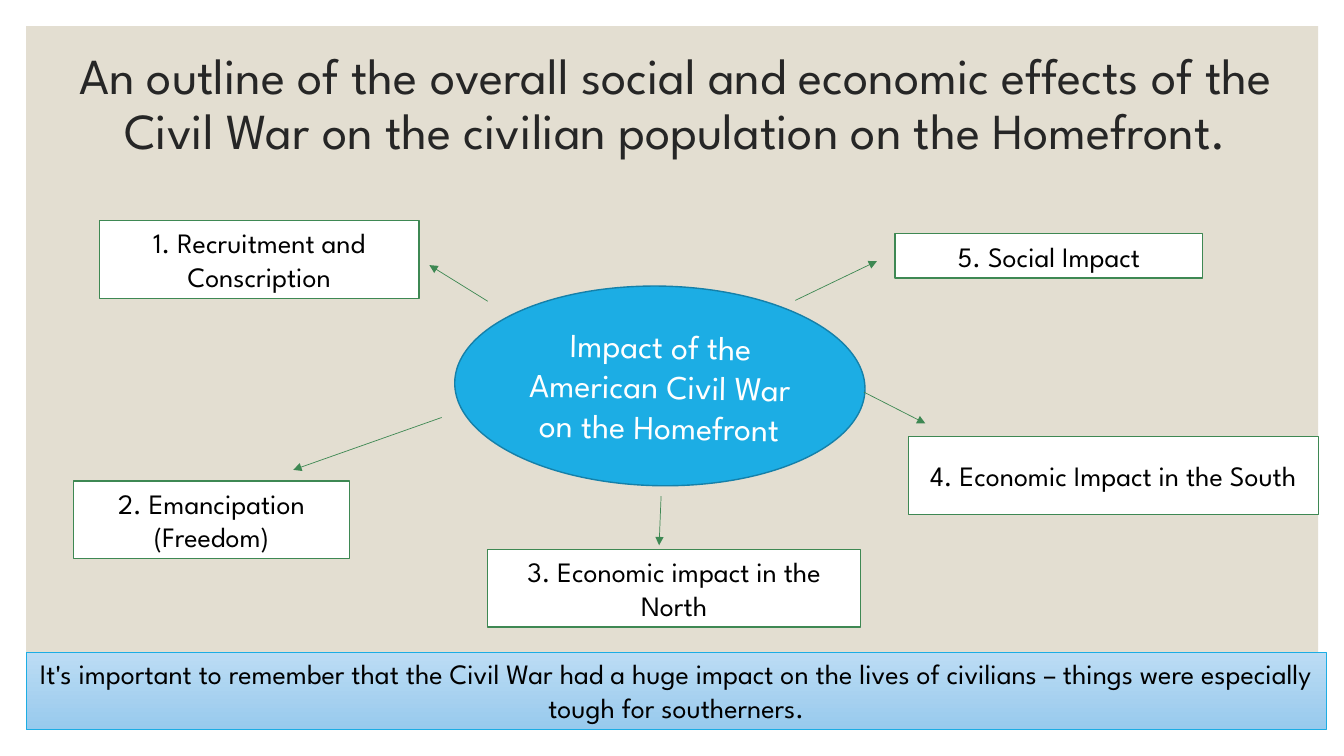
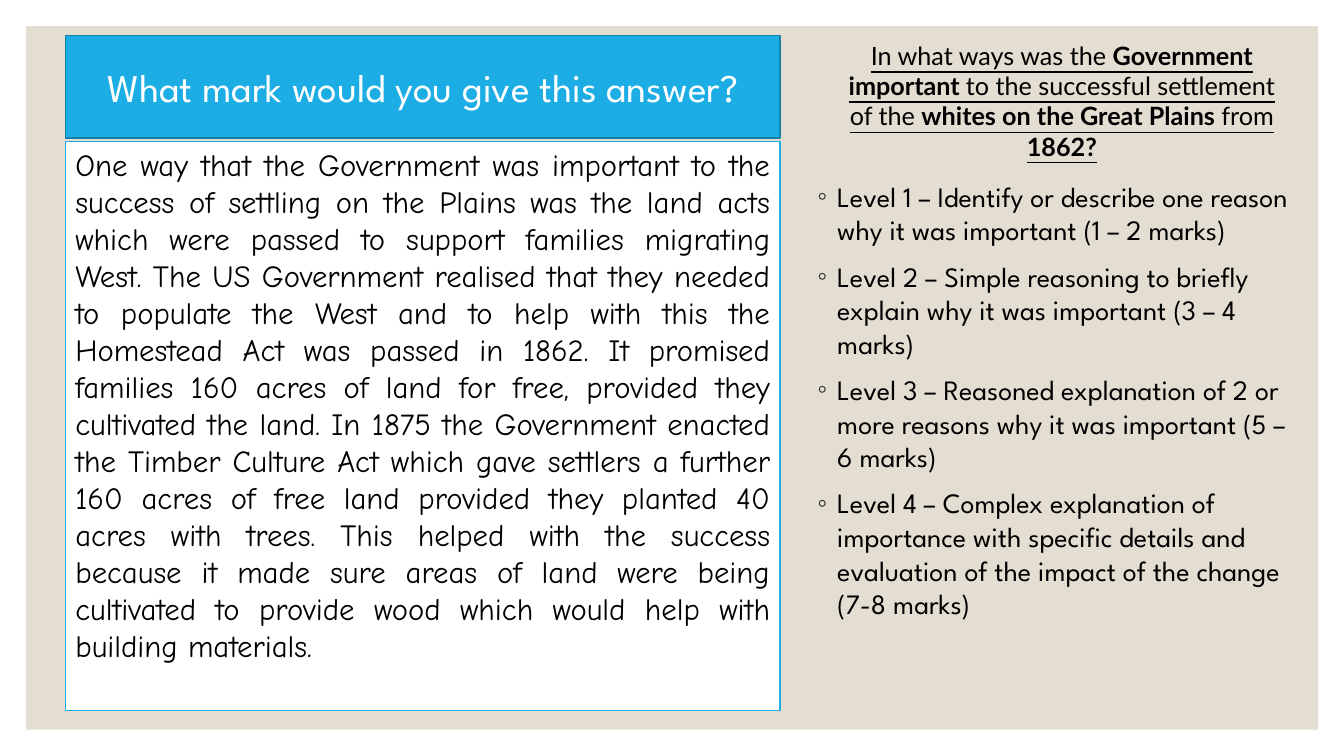
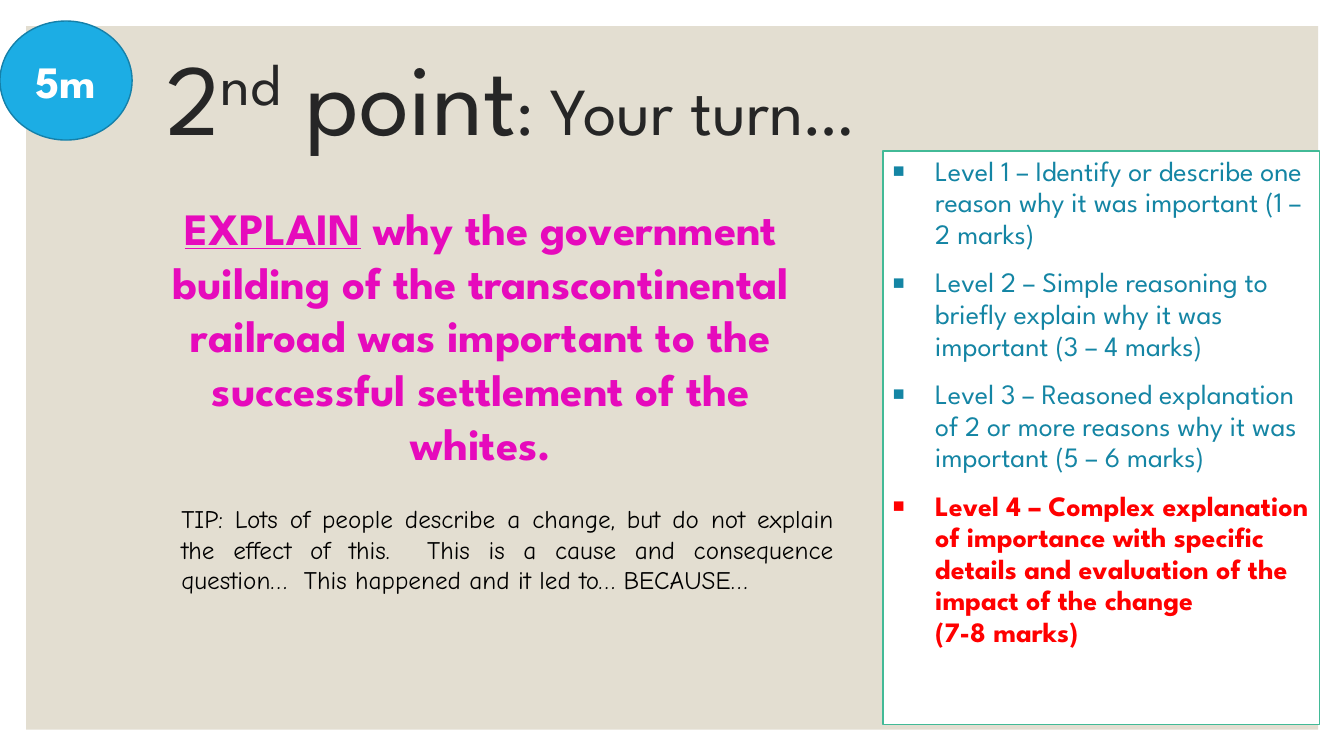
"""Build three lesson slides on the American Civil War and the Great Plains."""
import dataclasses
import typing

import lxml.etree
import pptx
import pptx.dml.color
import pptx.enum.dml
import pptx.enum.shapes
import pptx.enum.text
import pptx.oxml
import pptx.oxml.ns
import pptx.slide
import pptx.util

Cm = pptx.util.Cm
Pt = pptx.util.Pt
Kind = pptx.enum.shapes.MSO_SHAPE
Align = pptx.enum.text.PP_ALIGN
Anchor = pptx.enum.text.MSO_ANCHOR
Fit = pptx.enum.text.MSO_AUTO_SIZE
Area = tuple[float, float, float, float]
Format = dict[str, typing.Any]


@dataclasses.dataclass(frozen=True)
class Theme:
    sand: str = "E3DED1"
    white: str = "FFFFFF"
    black: str = "000000"
    dark: str = "262626"
    blue: str = "1CADE4"
    navy: str = "1580A9"
    green: str = "3E8853"
    mint: str = "42BA97"
    teal: str = "1485A4"
    red: str = "FF0000"
    pink: str = "E60ABC"
    fade: tuple[str, str] = ("BCDCF4", "98CAED")
    main: str = "League Spartan"
    hand: str = "Comic Neue"
    plain: str = "Lato"
    small: int = 18
    text: int = 20
    essay: int = 22
    hub: int = 24
    head: int = 28
    bold: int = 32
    title: int = 36
    turn: int = 48
    giant: int = 72


THEME = Theme()


@dataclasses.dataclass(frozen=True)
class Run:
    text: str
    size: int = THEME.text
    ink: str = THEME.black
    face: str = THEME.main
    bold: bool = False
    under: bool = False
    lift: int = 0


@dataclasses.dataclass(frozen=True)
class Mark:
    sign: str
    ink: str
    dent: float
    scale: int = 100


@dataclasses.dataclass(frozen=True)
class Para:
    runs: list[Run]
    form: Format = dataclasses.field(default_factory=lambda: {"alignment": Align.CENTER})
    mark: Mark | None = None


@dataclasses.dataclass(frozen=True)
class Box:
    area: Area
    paras: list[Para] = dataclasses.field(default_factory=list)
    kind: Kind | None = Kind.RECTANGLE
    fill: str | tuple[str, str] = THEME.white
    line: str | None = None
    width: float = 1
    anchor: Anchor = Anchor.MIDDLE
    grow: bool = False
    turn: float = 0


@dataclasses.dataclass(frozen=True)
class Arrow:
    start: tuple[float, float]
    end: tuple[float, float]


JUST: Format = {"alignment": Align.JUSTIFY}
LEVELS = [
    "Level 1 – Identify or describe one reason why it was important (1 – 2 marks)",
    "Level 2 – Simple reasoning to briefly explain why it was important (3 – 4 marks)",
    "Level 3 – Reasoned explanation of 2 or more reasons why it was important (5 – 6 marks)",
    "Level 4 – Complex explanation of importance with specific details and evaluation"
    " of the impact of the change (7-8 marks)",
]
ESSAY = (
    "One way that the Government was important to the success of settling on the Plains was"
    " the land acts which were passed to support families migrating West. The US Government"
    " realised that they needed to populate the West and to help with this the Homestead Act"
    " was passed in 1862. It promised families 160 acres of land for free, provided they"
    " cultivated the land. In 1875 the Government enacted the Timber Culture Act which gave"
    " settlers a further 160 acres of free land provided they planted 40 acres with trees."
    " This helped with the success because it made sure areas of land were being cultivated"
    " to provide wood which would help with building materials.  "
)
TOPICS: list[tuple[str, Area]] = [
    ("1. Recruitment and Conscription", (2.51, 5.56, 8.05, 1.96)),
    ("2. Emancipation (Freedom)", (1.85, 12.12, 6.96, 1.96)),
    ("3. Economic impact in the North", (12.29, 13.84, 9.4, 1.96)),
    ("5. Social Impact", (22.56, 5.89, 7.75, 1.12)),
    ("4. Economic Impact in the South", (22.89, 11, 10.34, 1.96)),
]
ARROWS = [
    Arrow((20.04, 7.57), (22.1, 6.58)),
    Arrow((12.29, 7.59), (10.82, 6.68)),
    Arrow((16.66, 12.5), (16.61, 13.74)),
    Arrow((11.13, 10.52), (7.39, 11.84)),
    Arrow((21.77, 9.88), (23.32, 10.67)),
]


def tint(code: str) -> pptx.dml.color.RGBColor:
    """Turn a hex code into a colour."""
    return pptx.dml.color.RGBColor.from_string(code)


def apply(target: typing.Any, form: Format) -> None:
    """Set each format value on the target."""
    for name, value in form.items():
        setattr(target, name, value)


def child(parent: typing.Any, tag: str, **form: str) -> None:
    """Append a drawing element with its attributes."""
    lxml.etree.SubElement(parent, pptx.oxml.ns.qn(tag), form)


def write(para: typing.Any, run: Run) -> None:
    """Add a run, with a line break at each newline."""
    for index, part in enumerate(run.text.split("\n")):
        if index:
            para.add_line_break()
        piece = para.add_run()
        piece.text = part
        apply(piece.font, {"name": run.face, "size": Pt(run.size),
                           "bold": run.bold, "underline": run.under})
        piece.font.color.rgb = tint(run.ink)
        if run.lift:
            piece.font._element.set("baseline", str(run.lift * 1000))


def bullet(para: typing.Any, mark: Mark) -> None:
    """Give a paragraph a hanging bullet."""
    props = para._p.get_or_add_pPr()
    dent = Cm(mark.dent)
    props.set("marL", str(dent))
    props.set("indent", str(-dent))
    shade = lxml.etree.SubElement(props, pptx.oxml.ns.qn("a:buClr"))
    child(shade, "a:srgbClr", val=mark.ink)
    child(props, "a:buSzPct", val=str(mark.scale * 1000))
    child(props, "a:buFont", typeface="Arial")
    child(props, "a:buChar", char=mark.sign)


def paint(shape: typing.Any, box: Box) -> None:
    """Set the fill, line and shadow of a shape."""
    shape.shadow.inherit = False
    if isinstance(box.fill, str):
        shape.fill.solid()
        shape.fill.fore_color.rgb = tint(box.fill)
    else:
        shape.fill.gradient()
        shape.fill.gradient_angle = 270
        for stop, code, place in zip(shape.fill.gradient_stops, box.fill, (0, 1)):
            stop.color.rgb = tint(code)
            stop.position = place
    if box.line:
        shape.line.color.rgb = tint(box.line)
        shape.line.width = Pt(box.width)
    else:
        shape.line.fill.background()


def draw(slide: pptx.slide.Slide, box: Box) -> None:
    """Draw a box with its text."""
    area = [Cm(size) for size in box.area]
    if box.kind is None:
        shape = slide.shapes.add_textbox(*area)
    else:
        shape = slide.shapes.add_shape(box.kind, *area)
        paint(shape, box)
    shape.rotation = box.turn
    frame = shape.text_frame
    apply(frame, {"word_wrap": True, "vertical_anchor": box.anchor,
                  "auto_size": Fit.SHAPE_TO_FIT_TEXT if box.grow else Fit.NONE})
    for index, item in enumerate(box.paras):
        para = frame.add_paragraph() if index else frame.paragraphs[0]
        apply(para, item.form)
        if item.mark:
            bullet(para, item.mark)
        for run in item.runs:
            write(para, run)


def point(slide: pptx.slide.Slide, arrow: Arrow) -> None:
    """Draw a thin arrow."""
    ends = [Cm(size) for size in arrow.start + arrow.end]
    link = slide.shapes.add_connector(pptx.enum.shapes.MSO_CONNECTOR.STRAIGHT, *ends)
    link.line.color.rgb = tint(THEME.green)
    link.line.width = Pt(0.5)
    child(link.line._get_or_add_ln(), "a:tailEnd", type="triangle")
    child(link._element.spPr, "a:effectLst")


def title(area: Area, runs: list[Run], align: Align) -> Box:
    """Make a slide title."""
    return Box(area, [Para(runs, {"alignment": align, "line_spacing": 0.9})], kind=None)


def begin(deck: typing.Any) -> pptx.slide.Slide:
    """Add a blank slide with the sand panel."""
    slide = deck.slides.add_slide(deck.slide_layouts[6])
    draw(slide, Box((0.66, 0.66, 32.56, 17.73), fill=THEME.sand))
    return slide


def impact(deck: typing.Any) -> None:
    """Draw the map of effects on the Homefront."""
    slide = begin(deck)
    draw(slide, title((0.48, 0.43, 33.1, 4.47), [Run(
        "An outline of the overall social and economic effects of the Civil War"
        " on the civilian population on the Homefront.", THEME.title, THEME.dark)], Align.CENTER))
    draw(slide, Box((11.46, 7.21, 10.34, 5.03), [Para([Run(
        "Impact of the American Civil War on the Homefront", THEME.hub, THEME.white)])],
        Kind.OVAL, THEME.blue, THEME.navy, turn=1))
    for text, area in TOPICS:
        draw(slide, Box(area, [Para([Run(text)])], line=THEME.green, grow=True))
    for arrow in ARROWS:
        point(slide, arrow)
    draw(slide, Box((0.66, 16.43, 32.77, 1.96), [Para([Run(
        "It's important to remember that the Civil War had a huge impact on the lives of"
        " civilians – things were especially tough for southerners.")])],
        fill=THEME.fade, line=THEME.blue, width=0.5, anchor=Anchor.TOP, grow=True))


def answer(deck: typing.Any) -> None:
    """Draw the sample answer beside its mark scheme."""
    slide = begin(deck)
    draw(slide, Box((1.65, 3.56, 18.01, 14.35),
                    [Para([Run(ESSAY, THEME.essay, face=THEME.hand)], JUST)],
                    line=THEME.blue, anchor=Anchor.TOP, grow=True))
    draw(slide, Box((1.65, 0.89, 18.01, 2.59), [Para([Run(
        "What mark would you give this answer?", THEME.head, THEME.white)])],
        fill=THEME.blue, line=THEME.navy))
    mark = Mark("◦", THEME.dark, 0.5)
    form = {"alignment": Align.LEFT, "space_before": Pt(9)}
    draw(slide, Box((20.35, 4.39, 12.8, 13),
                    [Para([Run(text)], form, mark) for text in LEVELS],
                    kind=None, anchor=Anchor.TOP))
    parts = ["In what ways was the ", "Government important ",
             "to the successful settlement of the ", "whites on the Great Plains ",
             "from ", "1862?"]
    runs = [Run(text, THEME.small, face=THEME.plain, bold=index % 2 == 1, under=True)
            for index, text in enumerate(parts)]
    draw(slide, Box((20.93, 0.89, 11.66, 3.33), [Para(runs)],
                    kind=None, anchor=Anchor.TOP, grow=True))


def task(deck: typing.Any) -> None:
    """Draw the timed writing task."""
    slide = begin(deck)
    big = Run("2", THEME.giant, THEME.dark)
    draw(slide, title((3.94, 0.53, 26.67, 4.11), [
        big,
        dataclasses.replace(big, text="nd", lift=30),
        dataclasses.replace(big, text=" point"),
        dataclasses.replace(big, text=": Your turn…", size=THEME.turn),
    ], Align.LEFT))
    verb = Run("EXPLAIN", THEME.bold, THEME.pink, bold=True, under=True)
    rest = dataclasses.replace(
        verb, under=False,
        text=" why the government building of the transcontinental railroad was"
             " important to the successful settlement of the whites.")
    draw(slide, Box((3.73, 4.93, 16.79, 7.01),
                    [Para([verb, rest], {"alignment": Align.CENTER, "space_before": Pt(9)})],
                    kind=None, anchor=Anchor.TOP))
    form = {"alignment": Align.LEFT, "line_spacing": 0.94,
            "space_before": Pt(10), "space_after": Pt(2)}
    goals = [Run(text, ink=THEME.teal) for text in LEVELS]
    goals[-1] = Run(LEVELS[-1].replace("(", "\n("), ink=THEME.red, bold=True)
    draw(slide, Box((22.25, 3.81, 11, 14.45),
                    [Para([goal], form, Mark("■", goal.ink, 1.07, 70)) for goal in goals],
                    line=THEME.mint, anchor=Anchor.TOP))
    draw(slide, Box((4.32, 12.57, 16.94, 3.33), [Para([Run(
        "TIP: Lots of people describe a change, but do not explain the effect of this. "
        " This is a cause and consequence question…  This happened and it led to… BECAUSE…",
        THEME.small, face=THEME.hand)], JUST)], kind=None, anchor=Anchor.TOP, grow=True))
    draw(slide, Box((0, 0.53, 3.33, 3), [Para([Run(
        "5m", THEME.bold, THEME.white, bold=True)])], Kind.OVAL, THEME.blue, THEME.navy))


def main() -> None:
    """Build and save the deck."""
    deck = pptx.Presentation()
    apply(deck, {"slide_width": Cm(33.87), "slide_height": Cm(19.05)})
    for build in (impact, answer, task):
        build(deck)
    deck.save("out.pptx")


if __name__ == "__main__":
    main()
